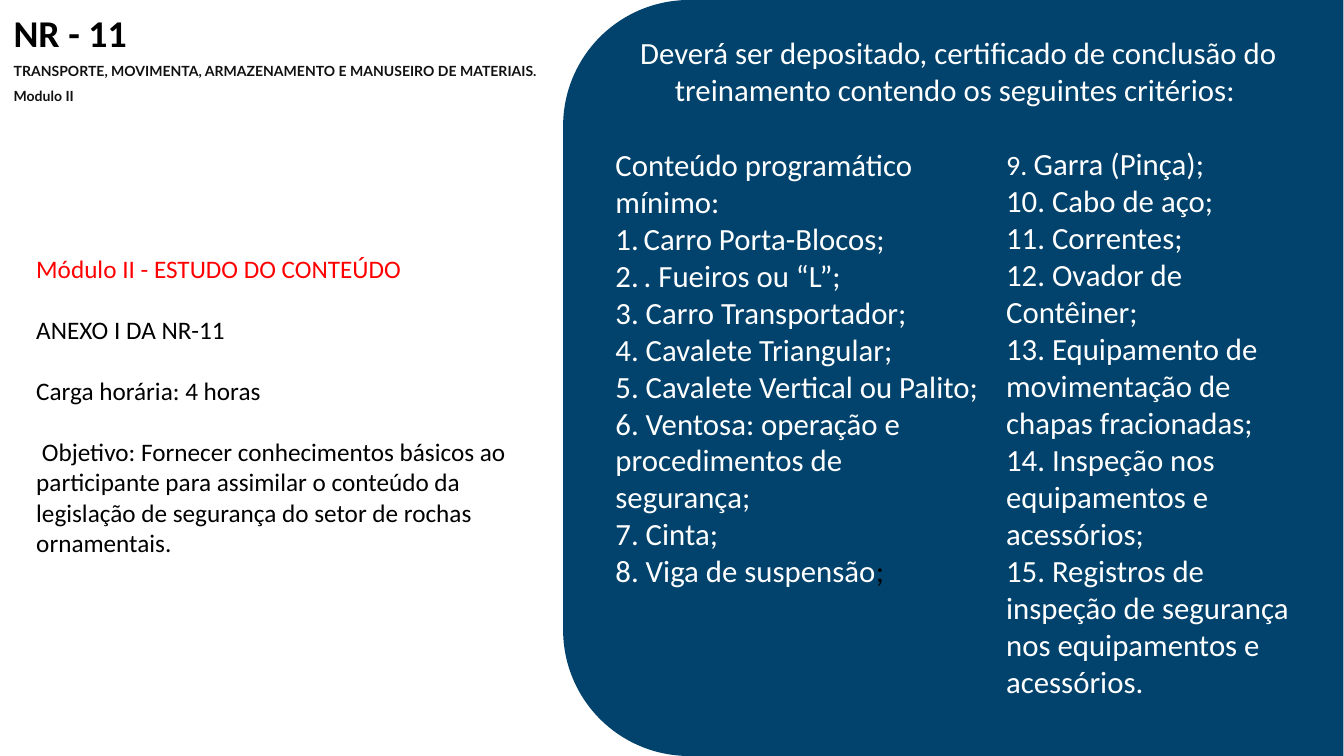
"""Build the NR-11 module II training slide."""
import dataclasses

import pptx
import pptx.dml.color
import pptx.enum.shapes
import pptx.enum.text
import pptx.oxml.ns
import pptx.util
from lxml import etree
from pptx.util import Inches


@dataclasses.dataclass(frozen=True)
class Theme:
    panel: str = "01436C"
    light: str = "FFFFFF"
    dark: str = "000000"
    subtitle: str = "111111"
    accent: str = "FF0000"
    font: str = "Calibri"
    subtitle_font: str = "Lato"
    title_size: int = 54
    list_size: int = 44
    small_number_size: int = 40
    body_size: int = 36
    subtitle_size: int = 20
    header_leading: int = 35
    body_gap: int = 44


THEME = Theme()
SUMMARY = [
    "Módulo II - ESTUDO DO CONTEÚDO",
    "ANEXO I DA NR-11",
    "Carga horária: 4 horas",
    " Objetivo: Fornecer conhecimentos básicos ao participante para assimilar o conteúdo "
    "da legislação de segurança do setor de rochas ornamentais.",
]
TOPICS_LEFT = [
    "Conteúdo programático mínimo:",
    "Carro Porta-Blocos;",
    ". Fueiros ou “L”;",
    "3. Carro Transportador;",
    "4. Cavalete Triangular;",
    "5. Cavalete Vertical ou Palito;",
    "6. Ventosa: operação e procedimentos de segurança;",
    "7. Cinta;",
    "8. Viga de suspensão",
]
TOPICS_RIGHT = [
    "9. ",
    "10. Cabo de aço;",
    "11. Correntes;",
    "12. Ovador de Contêiner;",
    "13. Equipamento de movimentação de chapas fracionadas; "
    "14. Inspeção nos equipamentos e acessórios;",
    "15. Registros de inspeção de segurança nos equipamentos e acessórios.",
]


def style_run(r, size, color, font=THEME.font, bold=None):
    r.font.size = pptx.util.Pt(size)
    r.font.name = font
    r.font.bold = bold
    r.font.color.rgb = pptx.dml.color.RGBColor.from_string(color)


def add_panel(s, kind, box):
    sp = s.shapes.add_shape(kind, *map(Inches, box))
    sp.shadow.inherit = False
    sp.fill.solid()
    sp.fill.fore_color.rgb = pptx.dml.color.RGBColor.from_string(THEME.panel)
    sp.line.fill.background()


def add_text(s, box, lines, size, color):
    tf = s.shapes.add_textbox(*map(Inches, box)).text_frame
    tf.word_wrap = True
    tf.auto_size = pptx.enum.text.MSO_AUTO_SIZE.SHAPE_TO_FIT_TEXT
    tf.text = "\n".join(lines)
    for p in tf.paragraphs:
        style_run(p.runs[0], size, color)
    return tf


def append_run(p, text, size, color):
    r = p.add_run()
    r.text = text
    style_run(r, size, color)


def number_paragraph(p):
    pPr = p._p.get_or_add_pPr()
    pPr.set("marL", str(Inches(0.56)))
    pPr.set("indent", str(-Inches(0.56)))
    bullet = etree.SubElement(pPr, pptx.oxml.ns.qn("a:buAutoNum"))
    bullet.set("type", "arabicPeriod")


def add_header(s):
    lines = ["NR - 11", "TRANSPORTE, MOVIMENTA, ARMAZENAMENTO E MANUSEIRO DE MATERIAIS.", "Modulo II"]
    tf = add_text(s, (0.27, 0.61, 15.51, 1.91), lines, THEME.title_size, THEME.dark)
    tf.margin_left = tf.margin_top = tf.margin_right = tf.margin_bottom = 0
    for p in tf.paragraphs:
        p.line_spacing = pptx.util.Pt(THEME.header_leading)
        p.runs[0].font.bold = True
    for p in tf.paragraphs[1:]:
        style_run(p.runs[0], THEME.subtitle_size, THEME.subtitle, THEME.subtitle_font, True)


def add_summary(s):
    tf = add_text(s, (0.62, 4.98, 9.72, 6.16), SUMMARY, THEME.body_size, THEME.dark)
    style_run(tf.paragraphs[0].runs[0], THEME.body_size, THEME.accent)
    for p in tf.paragraphs[1:]:
        p.space_before = pptx.util.Pt(THEME.body_gap)


def add_topics(s):
    size, light = THEME.list_size, THEME.light
    left = add_text(s, (12.11, 2.84, 7.43, 8.99), TOPICS_LEFT, size, light)
    for p in left.paragraphs[1:3]:
        number_paragraph(p)
    append_run(left.paragraphs[-1], ";", size, THEME.dark)

    right = add_text(s, (19.86, 2.83, 5.93, 11.21), TOPICS_RIGHT, size, light)
    p = right.paragraphs[0]
    style_run(p.runs[0], THEME.small_number_size, light)
    append_run(p, "Garra (Pinça);", size, light)


def main():
    prs = pptx.Presentation()
    prs.slide_width, prs.slide_height = Inches(26.66), Inches(15)
    s = prs.slides.add_slide(prs.slide_layouts[6])
    shapes = pptx.enum.shapes.MSO_SHAPE
    add_panel(s, shapes.RECTANGLE, (14.27, 0, 12.38, 15))
    add_panel(s, shapes.ROUNDED_RECTANGLE, (11.17, 0, 15.17, 15))
    intro = "Deverá ser depositado, certificado de conclusão do treinamento contendo os seguintes critérios: "
    tf = add_text(s, (11.72, 0.62, 14.59, 1.58), [intro], THEME.list_size, THEME.light)
    tf.paragraphs[0].alignment = pptx.enum.text.PP_ALIGN.CENTER
    add_summary(s)
    add_header(s)
    add_topics(s)
    prs.save("out.pptx")


if __name__ == "__main__":
    main()
